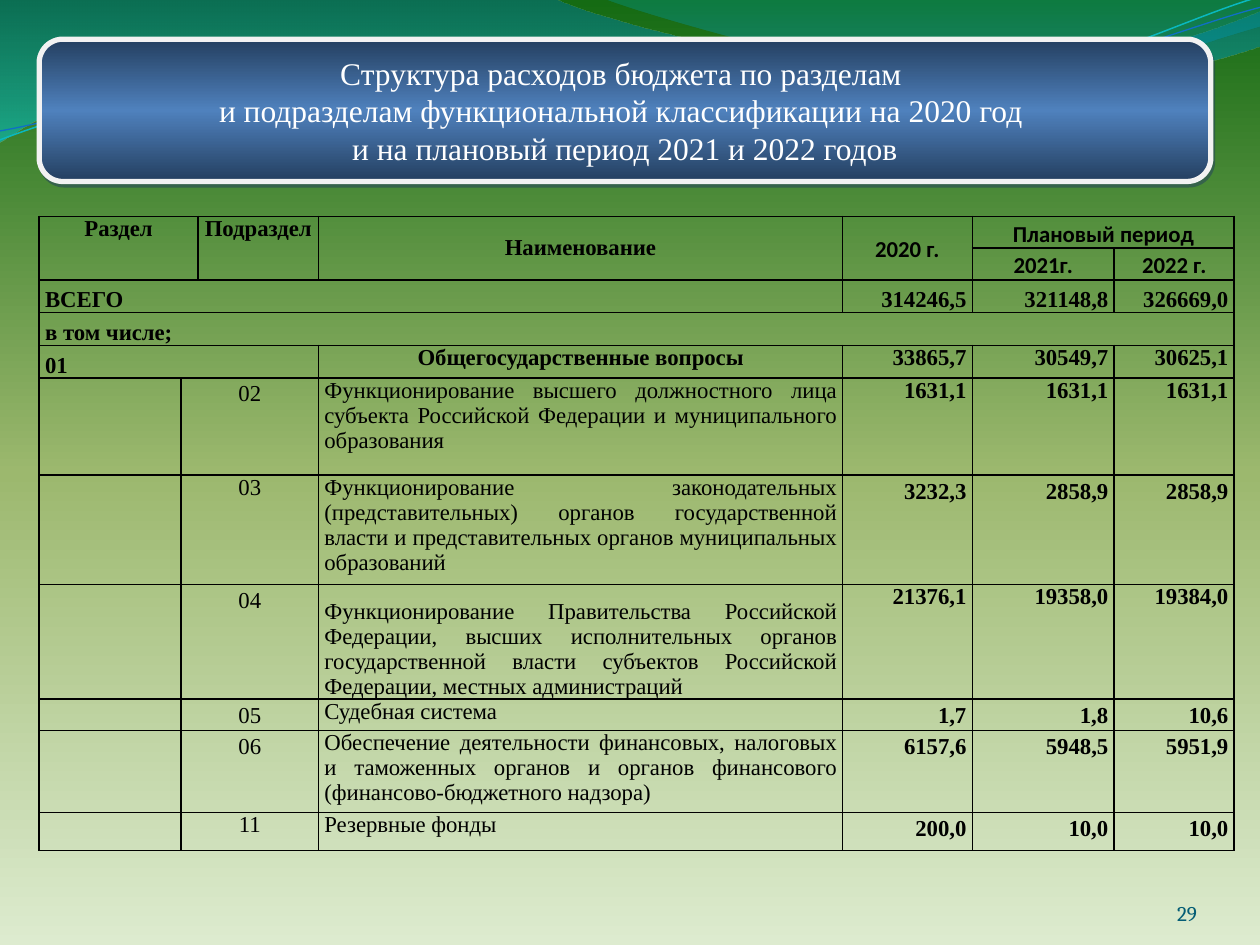
from lxml.etree import SubElement
from pptx import Presentation
from pptx.dml.color import RGBColor
from pptx.enum.shapes import MSO_SHAPE
from pptx.enum.text import MSO_ANCHOR, PP_ALIGN
from pptx.oxml import parse_xml
from pptx.oxml.ns import nsdecls, qn
from pptx.util import Cm, Pt

LEFT, CENTER, RIGHT, JUSTIFY = PP_ALIGN.LEFT, PP_ALIGN.CENTER, PP_ALIGN.RIGHT, PP_ALIGN.JUSTIFY
TOP, MIDDLE, BOTTOM = MSO_ANCHOR.TOP, MSO_ANCHOR.MIDDLE, MSO_ANCHOR.BOTTOM

TITLE = [
    "Структура расходов бюджета по разделам ",
    "и подразделам функциональной классификации на 2020 год ",
    "и на плановый период 2021 и 2022 годов",
]
WAVES = [
    ([(-0.03, -0.03), (11.18, -0.03), (12.09, 0.43, 16.87, 1.6, 19.25, 1.6),
      (21.67, 1.6, 24.33, 0.66, 25.4, 0.23), (25.43, 0.91),
      (24.97, 1.12, 22.1, 1.93, 18.95, 1.9), (15.8, 1.9, 9.7, 0.71, 6.53, 0.86),
      (3.28, 0.89, 1.17, 2.11, -0.03, 2.87)],
     [(0, "0074A1", 45), (100, "00C6CF", 55)]),
    ([(12.17, -0.03), (12.93, 0.28, 17.32, 1.57, 19.53, 1.65),
      (21.74, 1.75, 24.41, 0.81, 25.4, 0.53), (25.4, 0)],
     [(0, "00A1A9", 30), (80, "008BBF", 45)]),
]
CURVES = [
    ([(0, 2.82), (1.22, 2.36, 4.01, 1.45, 7.04, 1.32), (10.03, 1.19, 15.06, 2.26, 18.11, 2.03),
      (21.16, 1.8, 23.83, 0.38, 25.35, -0.05)], "0AB8BF", 0.85),
    ([(0, 2.64), (1.19, 2.44, 4.17, 1.55, 7.19, 1.42), (10.24, 1.3, 15.16, 2.11, 18.21, 1.91),
      (21.23, 1.7, 23.9, 0.53, 25.4, 0.15)], "0F6FC6", 0.75),
]
COLS = [2.86, 0.32, 2.43, 10.56, 2.62, 2.86, 2.42]
ROWS = [0.64, 0.64, 0.66, 0.66, 0.66, 1.96, 2.0, 2.31, 0.58, 1.5, 0.76]
SECTIONS = [
    ("02", True, "Функционирование высшего должностного лица субъекта Российской Федерации "
     "и муниципального образования", TOP, ("1631,1", "1631,1", "1631,1"), False),
    ("03", False, "Функционирование законодательных (представительных) органов государственной "
     "власти и представительных органов муниципальных образований", TOP,
     ("3232,3", "2858,9", "2858,9"), True),
    ("04", True, "Функционирование Правительства Российской Федерации, высших исполнительных "
     "органов государственной власти субъектов Российской Федерации, местных администраций",
     BOTTOM, ("21376,1", "19358,0", "19384,0"), False),
    ("05", True, "Судебная система", TOP, ("1,7", "1,8", "10,6"), True),
    ("06", True, "Обеспечение деятельности финансовых, налоговых и таможенных органов и органов "
     "финансового (финансово-бюджетного надзора)", TOP, ("6157,6", "5948,5", "5951,9"), True),
    ("11", False, "Резервные фонды", TOP, ("200,0", "10,0", "10,0"), True),
]


def color(value):
    return RGBColor.from_string(value)


def set_gradient(fill, parent, stops, angle):
    gs = "".join(
        f'<a:gs pos="{pos * 1000}"><a:srgbClr val="{rgb}"><a:alpha val="{alpha * 1000}"/></a:srgbClr></a:gs>'
        for pos, rgb, alpha in stops)
    fill.solid()
    parent.replace(parent.find(qn("a:solidFill")), parse_xml(
        f'<a:gradFill {nsdecls("a")} rotWithShape="1"><a:gsLst>{gs}</a:gsLst>'
        f'<a:lin ang="{angle * 60000}" scaled="0"/></a:gradFill>'))


class Deck:
    """Budget slide style with one method per kind of element."""

    serif, sans, number_font = "Times New Roman", "Calibri", "Cambria"
    ink, white = "000000", "FFFFFF"

    def __init__(self, prs):
        self.s = prs.slides.add_slide(prs.slide_layouts[6])

    def font(self, p, name, size, rgb, bold=False):
        p.font.name, p.font.size, p.font.bold = name, Pt(size), bold
        p.font.color.rgb = color(rgb)

    def background(self, stops, angle):
        fill = self.s.background.fill
        fill.solid()
        set_gradient(fill, self.s.element.cSld.find(qn("p:bg")).find(qn("p:bgPr")), stops, angle)

    def freeform(self, segments, closed):
        points = [(Cm(seg[i]), Cm(seg[i + 1])) for seg in segments for i in range(0, len(seg), 2)]
        fb = self.s.shapes.build_freeform(*points[0], scale=1.0)
        fb.add_line_segments(points[1:], close=closed)
        sp = fb.convert_to_shape()
        sp.shadow.inherit = False
        lines = iter(list(sp.element.spPr.iter(qn("a:lnTo"))))
        for seg in segments[1:]:
            first = next(lines)
            if len(seg) == 6:
                bezier = SubElement(first.getparent(), qn("a:cubicBezTo"))
                first.addprevious(bezier)
                for line in (first, next(lines), next(lines)):
                    bezier.append(line[0])
                    line.getparent().remove(line)
        return sp

    def wave(self, segments, stops):
        sp = self.freeform(segments, True)
        sp.line.fill.background()
        set_gradient(sp.fill, sp.element.spPr, stops, 90)

    def curve(self, segments, rgb, width):
        sp = self.freeform(segments, False)
        sp.fill.background()
        sp.line.color.rgb, sp.line.width = color(rgb), Pt(width)

    def banner(self, lines, x, y, w, h):
        sp = self.s.shapes.add_shape(MSO_SHAPE.FLOWCHART_ALTERNATE_PROCESS, Cm(x), Cm(y), Cm(w), Cm(h))
        sp.shadow.inherit = False
        spPr = sp.element.spPr
        set_gradient(sp.fill, spPr, [(0, "243F60", 100), (50, "4F81BD", 100), (100, "243F60", 100)], 90)
        sp.line.color.rgb, sp.line.width = color("F2F2F2"), Pt(3)
        spPr.find(qn("a:effectLst")).append(parse_xml(
            f'<a:outerShdw {nsdecls("a")} dist="27940" dir="3780000" rotWithShape="0">'
            '<a:srgbClr val="243F60"><a:alpha val="50000"/></a:srgbClr></a:outerShdw>'))
        tf = sp.text_frame
        tf.text = "\n".join(lines)
        tf.word_wrap, tf.vertical_anchor = True, MIDDLE
        for p in tf.paragraphs:
            p.alignment = CENTER
            self.font(p, self.serif, 18, self.white)

    def number(self, text, x, y, w, h):
        tf = self.s.shapes.add_textbox(Cm(x), Cm(y), Cm(w), Cm(h)).text_frame
        tf.margin_left = tf.margin_right = tf.margin_top = tf.margin_bottom = 0
        tf.word_wrap, tf.vertical_anchor = True, BOTTOM
        p = tf.paragraphs[0]
        p.text, p.alignment = text, RIGHT
        self.font(p, self.number_font, 12, "045D75")

    def table(self, x, y, cols, rows):
        frame = self.s.shapes.add_table(len(rows), len(cols), Cm(x), Cm(y), Cm(sum(cols)), Cm(sum(rows)))
        self.tbl = frame.table
        self.tbl.first_row = self.tbl.horz_banding = False
        for col, width in zip(self.tbl.columns, cols):
            col.width = Cm(width)
        for row, height in zip(self.tbl.rows, rows):
            row.height = Cm(height)
        for cell in self.tbl.iter_cells():
            cell.margin_left = cell.margin_right = Cm(0.12)
            cell.margin_top = cell.margin_bottom = 0
            cell.fill.background()
            self.font(cell.text_frame.paragraphs[0], self.serif, 13, self.ink)
            tcPr = cell._tc.get_or_add_tcPr()
            for i, side in enumerate("LRTB"):
                tcPr.insert(i, parse_xml(
                    f'<a:ln{side} {nsdecls("a")} w="12700"><a:solidFill><a:srgbClr val="{self.ink}"/>'
                    f'</a:solidFill></a:ln{side}>'))

    def cell(self, row, col, text, align, anchor=TOP, bold=True, spaced=False, span=(1, 1), name=None):
        cell = self.tbl.cell(row, col)
        if span != (1, 1):
            cell.merge(self.tbl.cell(row + span[0] - 1, col + span[1] - 1))
        cell.vertical_anchor = anchor
        p = cell.text_frame.paragraphs[0]
        p.text, p.alignment = text, align
        if spaced:
            p.line_spacing, p.space_after = 1.15, Pt(10)
        self.font(p, name or self.serif, 13, self.ink, bold)

    def values(self, row, texts, **style):
        for col, text in enumerate(texts, 4):
            self.cell(row, col, text, RIGHT, **style)


def main():
    prs = Presentation()
    prs.slide_width, prs.slide_height = Cm(25.4), Cm(19.05)
    d = Deck(prs)
    d.background([(0, "DDEBCF", 100), (50, "9CB86E", 100), (100, "156B13", 100)], 270)
    for wave in WAVES:
        d.wave(*wave)
    for curve in CURVES:
        d.curve(*curve)
    d.number("29", 22.02, 17.65, 2.11, 1.02)
    d.banner(TITLE, 0.79, 0.79, 23.62, 2.87)

    d.table(0.79, 4.36, COLS, ROWS)
    d.cell(0, 0, "Раздел", CENTER, span=(2, 2))
    d.cell(0, 2, "Подраздел", CENTER, span=(2, 1))
    d.cell(0, 3, "Наименование", CENTER, MIDDLE, span=(2, 1))
    d.cell(0, 4, "2020 г.", CENTER, MIDDLE, spaced=True, span=(2, 1), name=d.sans)
    d.cell(0, 5, "Плановый период", CENTER, spaced=True, span=(1, 2), name=d.sans)
    for col, year in ((5, "2021г."), (6, "2022 г.")):
        d.cell(1, col, year, CENTER, spaced=True, name=d.sans)
    d.cell(2, 0, "ВСЕГО", LEFT, BOTTOM, span=(1, 4))
    d.values(2, ("314246,5", "321148,8", "326669,0"), anchor=BOTTOM)
    d.cell(3, 0, "в том числе;", LEFT, BOTTOM, span=(1, 7))
    d.cell(4, 0, "01", LEFT, BOTTOM, span=(1, 3))
    d.cell(4, 3, "Общегосударственные вопросы", CENTER)
    d.values(4, ("33865,7", "30549,7", "30625,1"))
    for row, (code, code_spaced, name, anchor, values, values_spaced) in enumerate(SECTIONS, 5):
        d.cell(row, 1, code, CENTER, bold=False, spaced=code_spaced, span=(1, 2))
        d.cell(row, 3, name, JUSTIFY, anchor, bold=False)
        d.values(row, values, spaced=values_spaced)
    prs.save("out.pptx")


if __name__ == "__main__":
    main()
